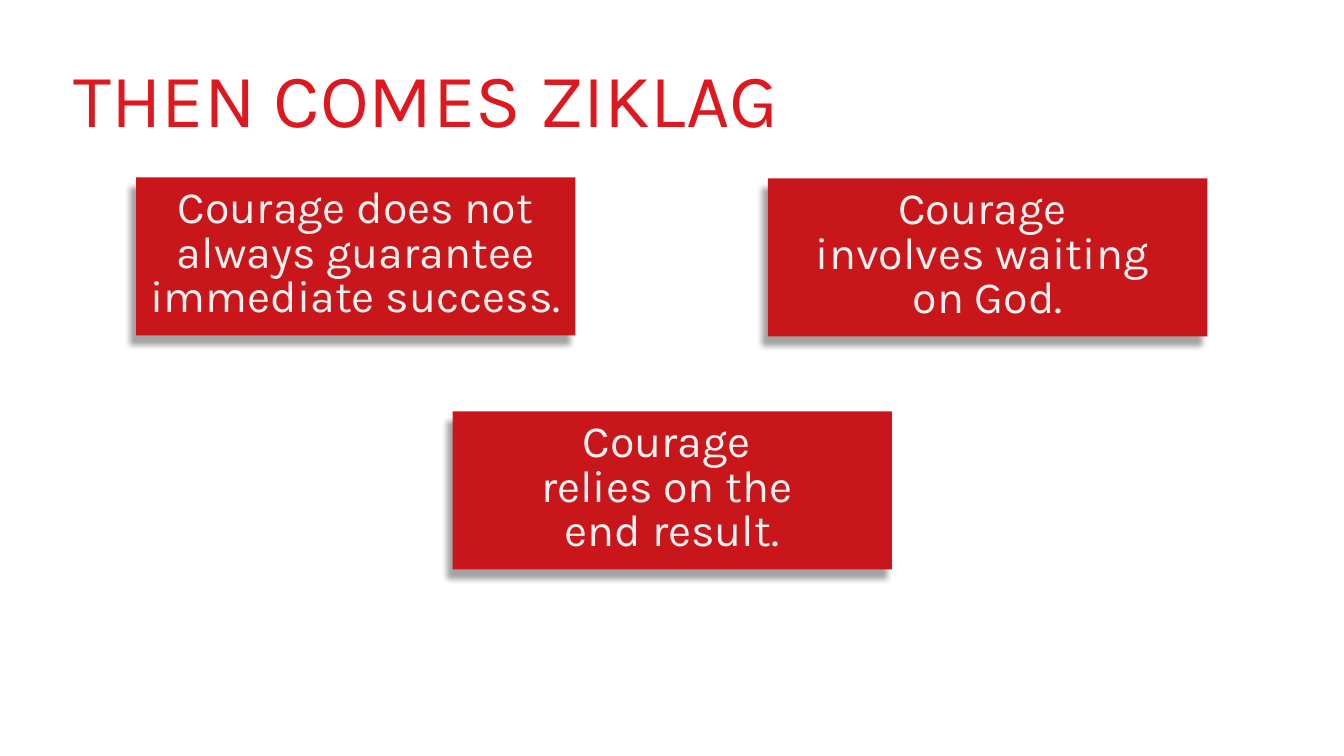
from lxml import etree
from pptx import Presentation
from pptx.dml.color import RGBColor
from pptx.enum import shapes, text
from pptx.oxml.ns import qn
from pptx.util import Pt

FONT = "Karla"
CARD_W, CARD_H = 313.9, 113
CARDS = [
    (97.2, 126.7, ["Courage does not always guarantee immediate success."]),
    (548.6, 127.4, ["Courage ", "involves waiting ", "on God."]),
    (323.3, 293.8, ["Courage ", "relies on the ", "end result."]),
]


def rgb(value):
    return RGBColor.from_string(value)


def set_all(obj, values):
    for name, value in values.items():
        setattr(obj, name, value)


def write(p, words, size, color):
    r = p.add_run()
    r.text = words
    set_all(r.font, {"name": FONT, "size": Pt(size)})
    r.font.color.rgb = rgb(color)


def add_shadow(sp):
    sp.shadow.inherit = False
    effects = sp._element.spPr.find(qn("a:effectLst"))
    shadow = etree.SubElement(effects, qn("a:outerShdw"), blurRad=str(Pt(4)),
                              dist=str(Pt(8)), dir=str(120 * 60000),
                              algn="ctr", rotWithShape="0")
    color = etree.SubElement(shadow, qn("a:srgbClr"), val="595959")
    etree.SubElement(color, qn("a:alpha"), val="55000")


def add_title(s, x, y, w, h, words):
    tf = s.shapes.add_textbox(Pt(x), Pt(y), Pt(w), Pt(h)).text_frame
    set_all(tf, {"word_wrap": True,
                 "auto_size": text.MSO_AUTO_SIZE.SHAPE_TO_FIT_TEXT})
    write(tf.paragraphs[0], words, 54, "DD181E")


def add_card(s, x, y, w, h, lines):
    sp = s.shapes.add_shape(shapes.MSO_SHAPE.RECTANGLE, Pt(x), Pt(y), Pt(w), Pt(h))
    sp.fill.solid()
    sp.fill.fore_color.rgb = rgb("C8161A")
    sp.line.fill.background()
    add_shadow(sp)
    tf = sp.text_frame
    set_all(tf, {"word_wrap": True, "vertical_anchor": text.MSO_ANCHOR.TOP,
                 "margin_left": Pt(7.2), "margin_top": Pt(7.2),
                 "margin_right": Pt(7.2), "margin_bottom": Pt(0)})
    for i, line in enumerate(lines):
        p = tf.add_paragraph() if i else tf.paragraphs[0]
        set_all(p, {"alignment": text.PP_ALIGN.CENTER, "line_spacing": Pt(32)})
        write(p, line, 32, "F0F0F0")


def main():
    prs = Presentation()
    set_all(prs, {"slide_width": Pt(960), "slide_height": Pt(540)})
    s = prs.slides.add_slide(prs.slide_layouts[6])

    # Title
    add_title(s, 45.4, 33.8, 708.5, 72.7, "THEN COMES ZIKLAG")

    # Courage cards
    for x, y, lines in CARDS:
        add_card(s, x, y, CARD_W, CARD_H, lines)

    prs.save("out.pptx")


if __name__ == "__main__":
    main()
